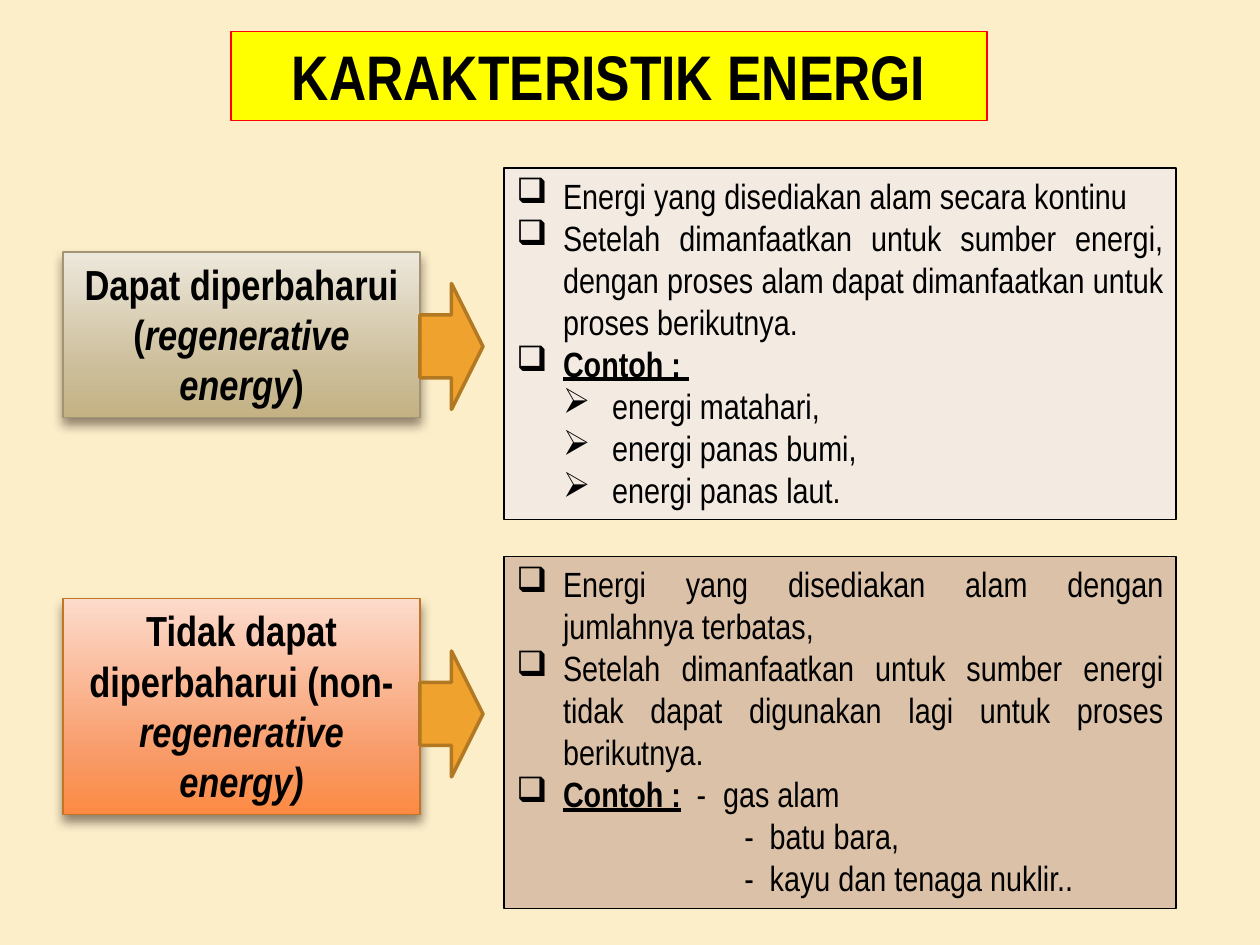
from dataclasses import dataclass

import pptx
import pptx.dml.color
import pptx.enum.shapes
import pptx.enum.text
import pptx.oxml
import pptx.oxml.ns
import pptx.util

RGBColor = pptx.dml.color.RGBColor
Align = pptx.enum.text.PP_ALIGN
Preset = pptx.enum.shapes.MSO_SHAPE

CREAM = RGBColor(0xFB, 0xEE, 0xC9)
BLACK = RGBColor(0, 0, 0)
RED = RGBColor(0xFF, 0, 0)
YELLOW = RGBColor(0xFF, 0xFF, 0)
PALE = RGBColor(0xF3, 0xEA, 0xE2)
TAN = RGBColor(0xDB, 0xC1, 0xA7)
AMBER = RGBColor(0xF0, 0xA2, 0x2E)
AMBER_DARK = RGBColor(0xB2, 0x78, 0x22)
KHAKI_LINE = RGBColor(0xA1, 0x95, 0x74)
ORANGE_LINE = RGBColor(0xC1, 0x75, 0x29)
SHADOW = RGBColor(0x4E, 0x3B, 0x30)
KHAKI = (RGBColor(0xED, 0xE8, 0xDC), RGBColor(0xCC, 0xBD, 0x99), RGBColor(0xC4, 0xB2, 0x84))
ORANGE = (RGBColor(0xFD, 0xDB, 0xCC), RGBColor(0xF8, 0x9B, 0x69), RGBColor(0xFC, 0x8A, 0x43))

FONT = "Arial Narrow"
COLUMNS, ROWS = 120, 90
CELL = pptx.util.Inches(10) // COLUMNS
NAMESPACE = pptx.oxml.ns.nsdecls("a")


@dataclass(frozen=True)
class Run:
    text: str
    bold: bool = False
    italic: bool = False
    underline: bool = False


@dataclass(frozen=True)
class Line:
    """One paragraph; margin, hanging and tabs are in inches."""
    runs: tuple[Run, ...]
    margin: float = 0
    hanging: float = 0
    bullet: str = ""
    tabs: tuple[float, ...] = ()


@dataclass(frozen=True)
class EnergyKind:
    """A label, an arrow and a description; tops and heights are in grid rows."""
    label: tuple[Run, ...]
    label_top: float
    label_height: float
    gradient: tuple[RGBColor, RGBColor, RGBColor]
    label_line: RGBColor
    arrow_top: float
    description: tuple[Line, ...]
    description_top: float
    description_fill: RGBColor


def point(*runs: Run, tabs: tuple[float, ...] = ()) -> Line:
    return Line(runs, 0.37, 0.37, "❑", tabs)


def example(text: str) -> Line:
    return Line((Run(text),), 0.76, 0.39, "➢")


def dash(text: str) -> Line:
    return Line((Run("-\t" + text),), 2.01, 0.2)


KINDS = (
    EnergyKind(
        (Run("Dapat diperbaharui (", bold=True),
         Run("regenerative energy", bold=True, italic=True), Run(")", bold=True)),
        24, 15.75, KHAKI, KHAKI_LINE, 27,
        (point(Run("Energi yang disediakan alam secara kontinu")),
         point(Run("Setelah dimanfaatkan untuk sumber energi, dengan proses alam "
                   "dapat dimanfaatkan untuk proses berikutnya.")),
         point(Run("Contoh : ", bold=True, underline=True)),
         example("energi matahari,"),
         example("energi panas bumi,"),
         example("energi panas laut.")),
        16, PALE),
    EnergyKind(
        (Run("Tidak dapat diperbaharui (non-", bold=True),
         Run("regenerative energy)", bold=True, italic=True)),
        57, 20.6, ORANGE, ORANGE_LINE, 62,
        (point(Run("Energi yang disediakan alam dengan jumlahnya terbatas,")),
         point(Run("Setelah dimanfaatkan untuk sumber energi tidak dapat "
                   "digunakan lagi untuk proses berikutnya.")),
         point(Run("Contoh :", bold=True, underline=True), Run("\t", underline=True),
               Run("-\tgas alam"), tabs=(1.43, 1.64)),
         dash("batu bara,"),
         dash("kayu dan tenaga nuklir..")),
        53, TAN),
)


def add_box(slide, preset, left: float, top: float, width: float, height: float,
            line: RGBColor, line_width: float, fill: RGBColor | None = None):
    """Place a shape by grid columns and rows."""
    shape = slide.shapes.add_shape(preset, *(round(n * CELL) for n in (left, top, width, height)))
    shape.shadow.inherit = False
    if fill is not None:
        shape.fill.solid()
        shape.fill.fore_color.rgb = fill
    shape.line.color.rgb = line
    shape.line.width = pptx.util.Pt(line_width)
    return shape


def add_gradient_and_shadow(shape, colors: tuple[RGBColor, ...]) -> None:
    stops = "".join(f'<a:gs pos="{share * 1000}"><a:srgbClr val="{color}"/></a:gs>'
                    for share, color in zip((0, 72, 100), colors))
    gradient = pptx.oxml.parse_xml(
        f'<a:gradFill {NAMESPACE} rotWithShape="1"><a:gsLst>{stops}</a:gsLst>'
        '<a:lin ang="5400000" scaled="0"/></a:gradFill>')
    properties = shape.element.spPr
    properties.find(pptx.oxml.ns.qn("a:prstGeom")).addnext(gradient)
    effects = properties.find(pptx.oxml.ns.qn("a:effectLst"))
    effects.append(pptx.oxml.parse_xml(
        f'<a:outerShdw {NAMESPACE} blurRad="{pptx.util.Pt(6)}" dist="{pptx.util.Pt(4)}" '
        f'dir="5400000" rotWithShape="0"><a:srgbClr val="{SHADOW}">'
        '<a:alpha val="60000"/></a:srgbClr></a:outerShdw>'))


def format_indent(paragraph, line: Line) -> None:
    properties = paragraph._p.get_or_add_pPr()
    properties.set("marL", str(pptx.util.Inches(line.margin)))
    properties.set("indent", str(-pptx.util.Inches(line.hanging)))
    if line.bullet:
        properties.append(pptx.oxml.parse_xml(f'<a:buChar {NAMESPACE} char="{line.bullet}"/>'))
    if line.tabs:
        stops = "".join(f'<a:tab pos="{pptx.util.Inches(tab)}" algn="l"/>' for tab in line.tabs)
        properties.append(pptx.oxml.parse_xml(f"<a:tabLst {NAMESPACE}>{stops}</a:tabLst>"))


def write_text(shape, lines: tuple[Line, ...], *, size: float,
               alignment=Align.CENTER, color: RGBColor = BLACK) -> None:
    frame = shape.text_frame
    frame.word_wrap = True
    frame.vertical_anchor = pptx.enum.text.MSO_ANCHOR.TOP
    for index, line in enumerate(lines):
        paragraph = frame.add_paragraph() if index else frame.paragraphs[0]
        paragraph.alignment = alignment
        format_indent(paragraph, line)
        for part in line.runs:
            run = paragraph.add_run()
            run.text = part.text
            font = run.font
            font.name, font.size, font.color.rgb = FONT, pptx.util.Pt(size), color
            font.bold, font.italic, font.underline = part.bold, part.italic, part.underline


def add_energy_kind(slide, kind: EnergyKind) -> None:
    description = add_box(slide, Preset.RECTANGLE, 48, kind.description_top, 64, 33.5,
                          BLACK, 0.75, kind.description_fill)
    write_text(description, kind.description, size=20, alignment=Align.JUSTIFY)
    label = add_box(slide, Preset.RECTANGLE, 6, kind.label_top, 34, kind.label_height,
                    kind.label_line, 0.79)
    add_gradient_and_shadow(label, kind.gradient)
    write_text(label, (Line(kind.label),), size=24)
    add_box(slide, Preset.RIGHT_ARROW, 40, kind.arrow_top, 6, 12, AMBER_DARK, 2, AMBER)


def main() -> None:
    presentation = pptx.Presentation()
    presentation.slide_width = COLUMNS * CELL
    presentation.slide_height = ROWS * CELL
    slide = presentation.slides.add_slide(presentation.slide_layouts[6])
    slide.background.fill.solid()
    slide.background.fill.fore_color.rgb = CREAM

    title = add_box(slide, Preset.RECTANGLE, 22, 3, 72, 8.5, RED, 0.75, YELLOW)
    write_text(title, (Line((Run("KARAKTERISTIK ENERGI", bold=True),)),), size=36)
    for kind in KINDS:
        add_energy_kind(slide, kind)
    presentation.save("out.pptx")


if __name__ == "__main__":
    main()
